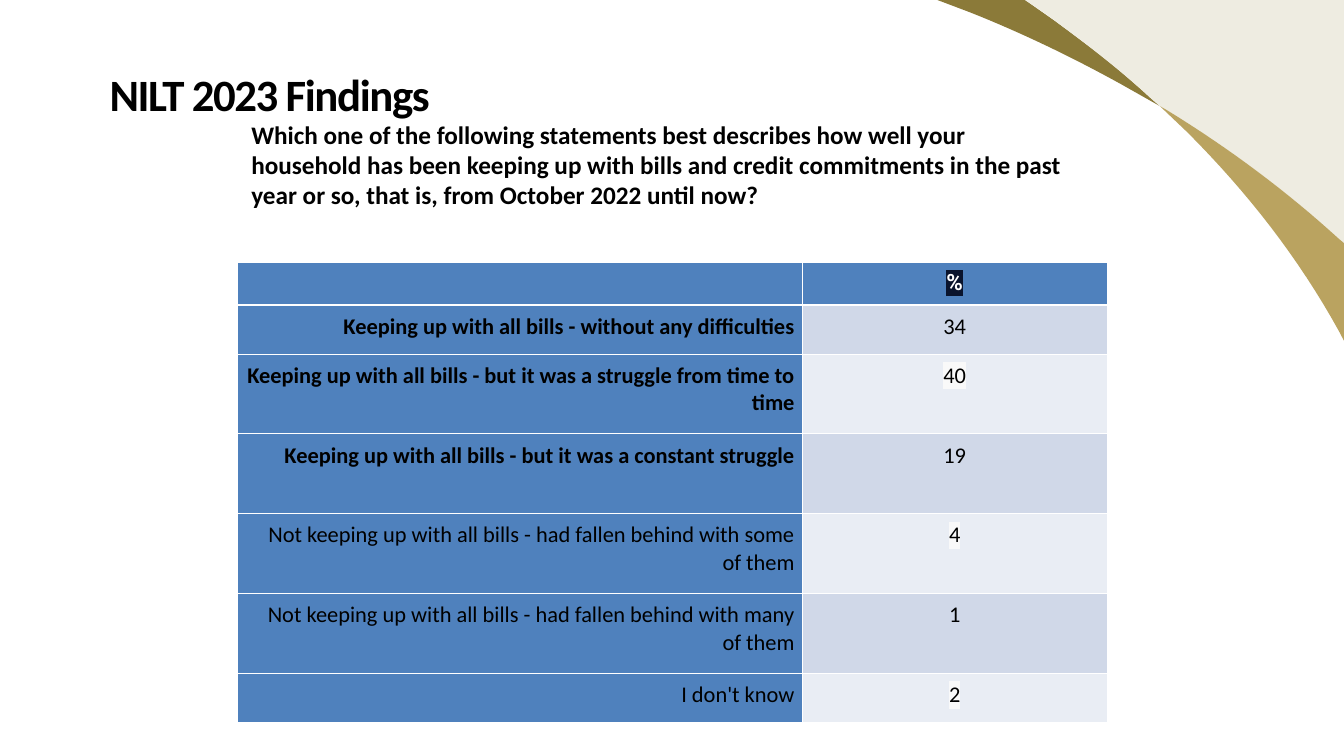
from lxml.etree import SubElement
from pptx import Presentation
from pptx.dml.color import RGBColor
from pptx.enum.text import PP_ALIGN as Align
from pptx.oxml import parse_xml
from pptx.oxml.ns import nsdecls, qn
from pptx.util import Cm, Pt

BLACK = RGBColor(0x00, 0x00, 0x00)
WHITE = RGBColor(0xFF, 0xFF, 0xFF)
NAVY = RGBColor(0x0A, 0x14, 0x2D)
BLUE = RGBColor(0x4F, 0x81, 0xBD)
BAND_DARK = RGBColor(0xD0, 0xD8, 0xE8)
BAND_LIGHT = RGBColor(0xE9, 0xED, 0xF4)
PALE_GREY = RGBColor(0xF9, 0xF9, 0xF9)
OLIVE = RGBColor(0x8B, 0x7A, 0x39)
CREAM = RGBColor(0xEE, 0xEC, 0xE1)
GOLD = RGBColor(0xBA, 0xA3, 0x60)

RIBBONS = [
    (OLIVE, [(35.43, 0), (38.74, 0), (40.01, 0.89), (41.2, 1.78),
             (41.99, 2.39, 42.75, 3.02, 43.46, 3.68), (43.84, 4.01), (42.37, 3.18),
             (40.56, 2.18, 38.68, 1.27, 36.7, 0.48)]),
    (CREAM, [(38.74, 0), (50.8, 0), (50.8, 9.19), (50.62, 9.04),
             (48.67, 7.26, 46.51, 5.64, 44.15, 4.19), (43.84, 4.01), (43.46, 3.68),
             (42.39, 2.69, 41.22, 1.78, 40.01, 0.89),
             (39.62, 0.58, 39.19, 0.3, 38.79, 0.03)]),
    (GOLD, [(43.84, 4.01), (44.15, 4.19), (46.51, 5.64, 48.67, 7.26, 50.62, 9.04),
            (50.8, 9.19), (50.8, 12.88), (50.6, 12.5),
            (49.1, 9.78, 47.17, 7.29, 44.88, 5)]),
]

QUESTION = ("Which one of the following statements best describes how well your household "
            "has been keeping up with bills and credit commitments in the past year or so, "
            "that is, from October 2022 until now?")

ANSWERS = [
    ("Keeping up with all bills - without any difficulties", 34, 1.85, True),
    ("Keeping up with all bills - but it was a struggle from time to time", 40, 3.02, True),
    ("Keeping up with all bills - but it was a constant struggle", 19, 3.02, True),
    ("Not keeping up with all bills - had fallen behind with some of them", 4, 3.02, False),
    ("Not keeping up with all bills - had fallen behind with many of them", 1, 3.02, False),
    ("I don't know", 2, 1.85, False),
]


def write(frame, text, size=24, color=BLACK, bold=False, font="Calibri",
          align=Align.LEFT, highlight=None, tracking=None):
    paragraph = frame.paragraphs[0]
    paragraph.alignment = align
    run = paragraph.add_run()
    run.text = text
    run.font.size = Pt(size)
    run.font.bold = bold
    run.font.color.rgb = color
    run.font.name = font
    properties = run.font._element
    if highlight is not None:
        properties.find(qn("a:solidFill")).addnext(parse_xml(
            f'<a:highlight {nsdecls("a")}><a:srgbClr val="{highlight}"/></a:highlight>'))
    if tracking is not None:
        properties.set("spc", str(int(tracking * 100)))


def curve_points(start, segment, steps=16):
    x1, y1, x2, y2, x3, y3 = segment
    for step in range(1, steps + 1):
        t = step / steps
        weights = ((1 - t) ** 3, 3 * t * (1 - t) ** 2, 3 * t * t * (1 - t), t ** 3)
        yield tuple(sum(w * v for w, v in zip(weights, values))
                    for values in ((start[0], x1, x2, x3), (start[1], y1, y2, y3)))


class SlideBuilder:
    """Draws styled elements on one slide."""

    def __init__(self, slide, border=WHITE, cell_margin=0.3):
        self.slide = slide
        self.border = border
        self.cell_margin = Cm(cell_margin)

    def ribbon(self, color, segments):
        points = [segments[0]]
        for segment in segments[1:]:
            points += [segment] if len(segment) == 2 else curve_points(points[-1], segment)
        corners = [(Cm(x), Cm(y)) for x, y in points]
        builder = self.slide.shapes.build_freeform(*corners[0])
        builder.add_line_segments(corners[1:], close=True)
        shape = builder.convert_to_shape()
        shape.shadow.inherit = False
        shape.fill.solid()
        shape.fill.fore_color.rgb = color
        shape.line.fill.background()

    def text(self, box, text, **style):
        frame = self.slide.shapes.add_textbox(*map(Cm, box)).text_frame
        frame.word_wrap = True
        write(frame, text, **style)

    def table(self, left, top, widths, heights):
        frame = self.slide.shapes.add_table(len(heights), len(widths), Cm(left), Cm(top),
                                            Cm(sum(widths)), Cm(sum(heights)))
        for column, width in zip(frame.table.columns, widths):
            column.width = Cm(width)
        for row, height in zip(frame.table.rows, heights):
            row.height = Cm(height)
        return frame.table

    def cell(self, cell, fill, text="", top=1, bottom=1, **style):
        properties = cell._tc.get_or_add_tcPr()
        for side, width in zip("LRTB", (1, 1, top, bottom)):
            line = SubElement(properties, qn(f"a:ln{side}"), w=str(Pt(width)))
            paint = SubElement(line, qn("a:solidFill"))
            SubElement(paint, qn("a:srgbClr"), val=str(self.border))
        cell.fill.solid()
        cell.fill.fore_color.rgb = fill
        if text:
            cell.margin_left = cell.margin_right = self.cell_margin
            cell.margin_top = cell.margin_bottom = self.cell_margin
            write(cell.text_frame, text, **style)


def main():
    presentation = Presentation()
    presentation.slide_width = Cm(50.8)
    presentation.slide_height = Cm(28.575)
    builder = SlideBuilder(presentation.slides.add_slide(presentation.slide_layouts[6]))

    for color, segments in RIBBONS:
        builder.ribbon(color, segments)
    builder.text((9.25, 4.37, 31.24, 19.3), QUESTION, size=27, bold=True, highlight=WHITE)
    builder.text((3.89, 2.39, 35.84, 1.98), "NILT 2023 Findings",
                 size=48, bold=True, tracking=-1.5)

    table = builder.table(8.97, 9.91, (21.36, 11.51), [1.6] + [row[2] for row in ANSWERS])
    builder.cell(table.cell(0, 0), BLUE, bottom=3)
    builder.cell(table.cell(0, 1), BLUE, "%", bottom=3, color=WHITE, bold=True,
                 font="Roboto", align=Align.CENTER, highlight=NAVY)
    for index, (answer, percent, _, bold) in enumerate(ANSWERS, start=1):
        top = 3 if index == 1 else 1
        band, highlight = (BAND_DARK, None) if index % 2 else (BAND_LIGHT, PALE_GREY)
        builder.cell(table.cell(index, 0), BLUE, answer, top=top, bold=bold, align=Align.RIGHT)
        builder.cell(table.cell(index, 1), band, str(percent), top=top,
                     align=Align.CENTER, highlight=highlight)

    presentation.save("out.pptx")


if __name__ == "__main__":
    main()
